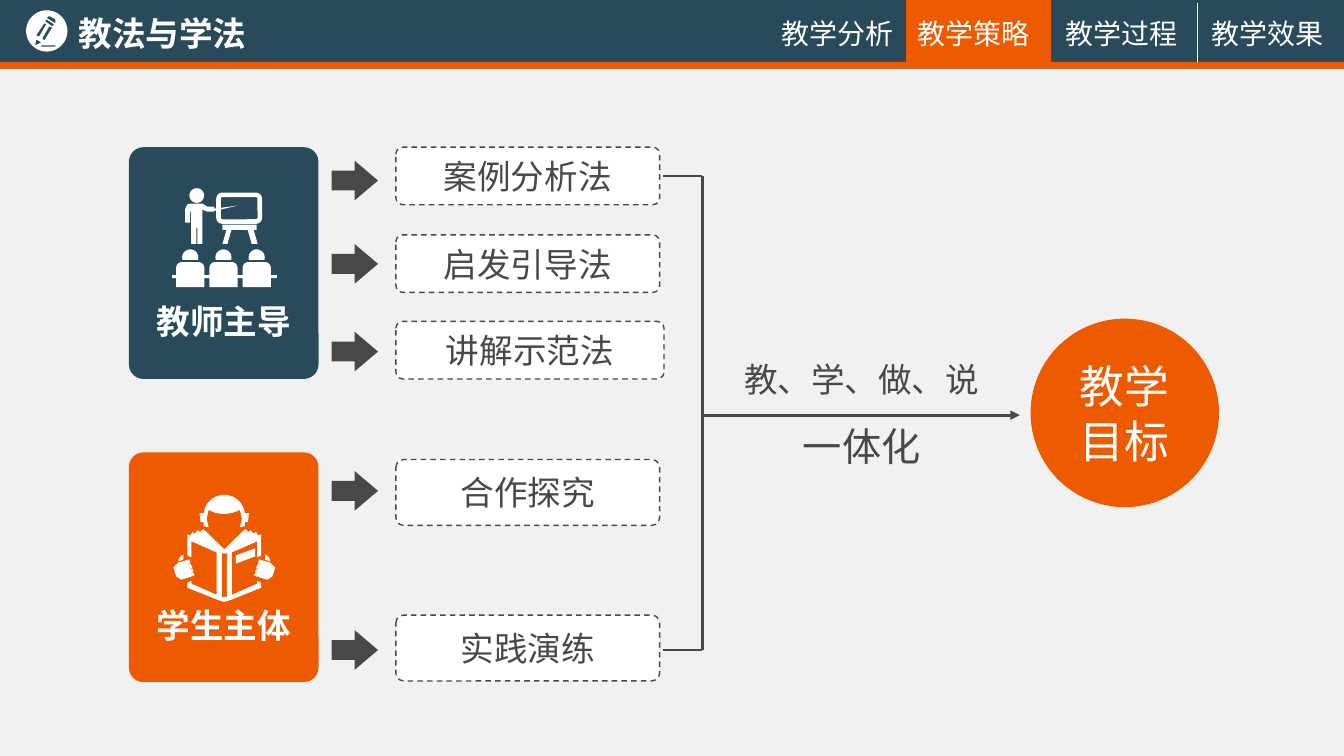
import math
from dataclasses import dataclass

import pptx
import pptx.dml.color
import pptx.enum.dml
import pptx.enum.shapes
import pptx.enum.text
import pptx.oxml
import pptx.oxml.ns
import pptx.util

Cm = pptx.util.Cm
Pt = pptx.util.Pt
SHAPE = pptx.enum.shapes.MSO_SHAPE
ALIGN = pptx.enum.text.PP_ALIGN
MIDDLE = pptx.enum.text.MSO_ANCHOR.MIDDLE
rgb = pptx.dml.color.RGBColor.from_string


@dataclass(frozen=True)
class Theme:
    font: str = "Noto Sans CJK SC"
    navy: str = "294A5A"
    orange: str = "ED5A00"
    ink: str = "484849"
    white: str = "FFFFFF"
    page: str = "F1F1F1"
    tab: float = 20
    body: float = 24
    emphasis: float = 28
    goal: float = 32


T = Theme()


def apply(target, values):
    for name, value in values.items():
        setattr(target, name, value)


def write(sp, text, size, color, bold=False, align=ALIGN.CENTER, inset=0, spacing=None):
    tf = sp.text_frame
    apply(tf, {"word_wrap": True, "vertical_anchor": MIDDLE, "margin_left": inset,
               "margin_right": inset, "margin_top": 0, "margin_bottom": 0})
    p = tf.paragraphs[0]
    apply(p, {"alignment": align, "line_spacing": spacing})
    r = p.add_run()
    r.text = text
    r.font.color.rgb = rgb(color)
    apply(r.font, {"size": Pt(size), "bold": bold, "name": T.font})
    ea = r.font._element.makeelement(pptx.oxml.ns.qn("a:ea"), {"typeface": T.font})
    r.font._element.append(ea)


def paint(sp, fill):
    sp.shadow.inherit = False
    sp.fill.solid()
    sp.fill.fore_color.rgb = rgb(fill)
    sp.line.fill.background()


def add_block(sl, kind, box, fill, adjust=()):
    sp = sl.shapes.add_shape(kind, *map(Cm, box))
    paint(sp, fill)
    for i, value in enumerate(adjust):
        sp.adjustments[i] = value
    return sp


def add_label(sl, box, text, size, color, **style):
    write(sl.shapes.add_textbox(*map(Cm, box)), text, size, color, **style)


def add_line(sl, start, end, color, width, arrow=False):
    cx = sl.shapes.add_connector(pptx.enum.shapes.MSO_CONNECTOR.STRAIGHT,
                                 *map(Cm, (*start, *end)))
    cx.line.color.rgb = rgb(color)
    cx.line.width = Pt(width)
    if arrow:
        ln = cx.line._get_or_add_ln()
        ln.append(ln.makeelement(pptx.oxml.ns.qn("a:tailEnd"), {"type": "triangle"}))
    props = cx.element.spPr
    props.append(props.makeelement(pptx.oxml.ns.qn("a:effectLst"), {}))


def arc(cx, cy, radius, start, end, steps=24):
    angles = [math.radians(start + (end - start) * i / steps) for i in range(steps + 1)]
    return [(cx + radius * math.cos(a), cy + radius * math.sin(a)) for a in angles]


def mirror(points, width):
    return [(width - x, y) for x, y in reversed(points)]


def add_icon(sl, x, y, unit, contours):
    scaled = [[(Cm(u * unit), Cm(v * unit)) for u, v in c] for c in contours]
    fb = sl.shapes.build_freeform(*scaled[0][0])
    for i, points in enumerate(scaled):
        if i:
            fb.move_to(*points[0])
        fb.add_line_segments(points[1:], close=True)
    paint(fb.convert_to_shape(Cm(x), Cm(y)), T.white)


def pencil_icon(sl, box):
    x, y, w = box
    add_icon(sl, x, y, w / 41, [
        arc(20.5, 20.5, 20.5, 0, 360, 60),
        [(15, 35), (29, 35), (29, 36), (15, 36)],
        [(16, 28), (23, 16), (26, 17), (18, 30)],
        [(10, 25), (18, 13), (20, 14), (13, 26)],
        [(9, 35), (10, 29), (15, 32)],
        [(20, 9), (19, 11), (26, 16), (28, 14)],
        [(21, 7), (22, 6), (24, 6), (29, 9), (29, 13), (21, 8)],
    ])


def teacher_icon(sl, box):
    x, y, w = box
    unit = w / 104
    contours = [
        arc(24.5, 7, 7.3, 0, 360),
        [(13, 34), (13, 20), (15, 16), (18, 15), (30, 15), (35, 18), (42, 18), (42, 23), (35, 23),
         (30, 21), (30, 55), (25, 55), (25, 39), (24, 39), (24, 55), (19, 55), (19, 23), (18, 23),
         (18, 34)],
        [(42, 20), (65, 17), (48, 21), (42, 22)],
        [(50, 36), (84, 36), (84, 41), (81, 41), (85, 55), (79, 55), (75, 41), (59, 41), (55, 55),
         (50, 55), (54, 41), (50, 41)],
    ]
    for left in (4, 37, 70):
        contours += [arc(left + 14, 68.5, 8, 162, 378),
                     arc(left + 6, 79, 6, 180, 270) + arc(left + 22, 79, 6, 270, 360)
                     + [(left + 28, 98), (left, 98)]]
    contours += [[(a, 86), (b, 86), (b, 89), (a, 89)]
                 for a, b in ((0, 4), (32, 37), (65, 70), (98, 104))]
    add_icon(sl, x, y, unit, contours)
    board = sl.shapes.add_shape(SHAPE.ROUNDED_RECTANGLE, Cm(x + 46 * unit), Cm(y + 6.3 * unit),
                                Cm(41 * unit), Cm(26.5 * unit))
    board.shadow.inherit = False
    board.adjustments[0] = 0.14
    board.fill.background()
    board.line.color.rgb = rgb(T.white)
    board.line.width = Pt(3.25)


def reader_icon(sl, box):
    x, y, w = box
    width = 101
    cover = [(50.5, 54), (30, 34), (27, 36), (30, 39), (24, 35), (22, 38), (27, 41), (19, 37),
             (17, 40), (25, 44), (14, 39), (14, 60), (18, 62), (18, 46), (43, 57), (43, 99),
             (18, 88), (18, 85), (14, 87), (14, 92), (44, 104), (50.5, 106)]
    hand = [(16, 64), (17, 67), (11, 71), (17, 68), (19, 72), (13, 75), (19, 73), (20, 76),
            (15, 79), (20, 77), (21, 80), (8, 84), (3, 81), (0, 72), (5, 67)]
    thumb = [(5, 66), (6, 62), (10, 59), (10, 64)]
    ear = [(35, 15), (33, 24), (35, 32), (30, 31), (30, 27), (27, 27), (26, 18), (30, 18)]
    head = ear + arc(50.5, 20.5, 20.5, 187, 353) + mirror(ear, width) + [(58, 18), (50, 19), (42, 18)]
    add_icon(sl, x, y, w / width, [
        head, cover + mirror(cover, width), [(48, 58), (53, 58), (53, 101), (48, 101)],
        [(62, 60), (81, 53), (81, 61), (62, 68)],
        hand, mirror(hand, width), thumb, mirror(thumb, width),
    ])


def header(sl, box, title, tabs, active):
    x, y, w, h = box
    add_block(sl, SHAPE.RECTANGLE, box, T.navy)
    add_block(sl, SHAPE.RECTANGLE, (x, y + 1.56, w, h - 1.56), T.orange)
    for text, left in tabs:
        if text == active:
            add_block(sl, SHAPE.RECTANGLE, (x + left - 0.3, y, 3.66, 1.65), T.orange)
        add_label(sl, (x + left, y + 0.42, 3.1, 0.86), text, T.tab, T.white, align=ALIGN.LEFT)
    add_line(sl, (x + 30.18, y + 0.08), (x + 30.18, y + 1.55), T.white, 0.75)
    pencil_icon(sl, (x + 0.66, y + 0.26, 1.04))
    sp = sl.shapes.title
    apply(sp, dict(zip(("left", "top", "width", "height"),
                       map(Cm, (x + 1.73, y + 0.2, 6, 1.27)))))
    write(sp, title, T.body, T.white, bold=True, align=ALIGN.LEFT, inset=Cm(0.25))
    sp.element.getparent().append(sp.element)


def role_card(sl, box, text, fill, label_top, icon, icon_box):
    x, y, w, h = box
    add_block(sl, SHAPE.ROUNDED_RECTANGLE, box, fill, (0.077,))
    dx, dy, size = icon_box
    icon(sl, (x + dx, y + dy, size))
    add_label(sl, (x, y + label_top, w, 1.27), text, T.body, T.white, bold=True)


def method(sl, box, text, arrow_y):
    x, y, w, h = box
    add_block(sl, SHAPE.RIGHT_ARROW, (x - 1.62, arrow_y - 0.5, 1.17, 1), T.ink, (0.5, 0.59))
    sp = add_block(sl, SHAPE.ROUNDED_RECTANGLE, box, T.white, (0.12,))
    sp.line.color.rgb = rgb(T.ink)
    apply(sp.line, {"width": Pt(1), "dash_style": pptx.enum.dml.MSO_LINE.DASH})
    write(sp, text, T.body, T.ink)


def goal(sl, box):
    x, y, w, h = box
    corner, base, mid = x + 0.99, y + h, y + 6.03
    add_line(sl, (x, y), (corner, y), T.ink, 1.5)
    add_line(sl, (corner, y), (corner, base), T.ink, 2.25)
    add_line(sl, (x, base), (corner, base), T.ink, 1.5)
    add_line(sl, (corner, mid), (x + 9, mid), T.ink, 2.25, arrow=True)
    add_label(sl, (x + 1.53, mid - 1.54, 6.96, 1.27), "教、学、做、说", T.body, T.ink)
    add_label(sl, (x + 1.53, mid + 0.06, 6.96, 1.45), "一体化", T.emphasis, T.ink)
    sp = add_block(sl, SHAPE.OVAL, (x + w - 4.75, mid - 2.43, 4.75, 4.75), T.orange)
    write(sp, "教学目标", T.goal, T.white, inset=Cm(0.4), spacing=Pt(39))


def main():
    prs = pptx.Presentation()
    apply(prs, {"slide_width": Cm(33.88), "slide_height": Cm(19.05)})
    sl = prs.slides.add_slide(prs.slide_layouts[5])
    sl.background.fill.solid()
    sl.background.fill.fore_color.rgb = rgb(T.page)
    header(sl, (0, 0, 33.88, 1.73), "教法与学法",
           [("教学分析", 19.71), ("教学策略", 23.14), ("教学过程", 26.85), ("教学效果", 30.53)],
           "教学策略")
    role_card(sl, (3.25, 3.71, 4.78, 5.84), "教师主导", T.navy, 3.74, teacher_icon, (1.09, 1.04, 2.64))
    role_card(sl, (3.25, 11.4, 4.78, 5.79), "学生主体", T.orange, 3.71, reader_icon, (1.12, 1.07, 2.57))
    for text, top, w, h, arrow_y in [("案例分析法", 3.71, 6.65, 1.45, 4.55),
                                     ("启发引导法", 5.92, 6.65, 1.45, 6.65),
                                     ("讲解示范法", 8.1, 6.76, 1.45, 8.86),
                                     ("合作探究", 11.58, 6.65, 1.66, 12.37),
                                     ("实践演练", 15.5, 6.65, 1.66, 16.38)]:
        method(sl, (9.98, top, w, h), text, arrow_y)
    goal(sl, (16.71, 4.43, 14.02, 11.95))
    prs.save("out.pptx")


if __name__ == "__main__":
    main()
